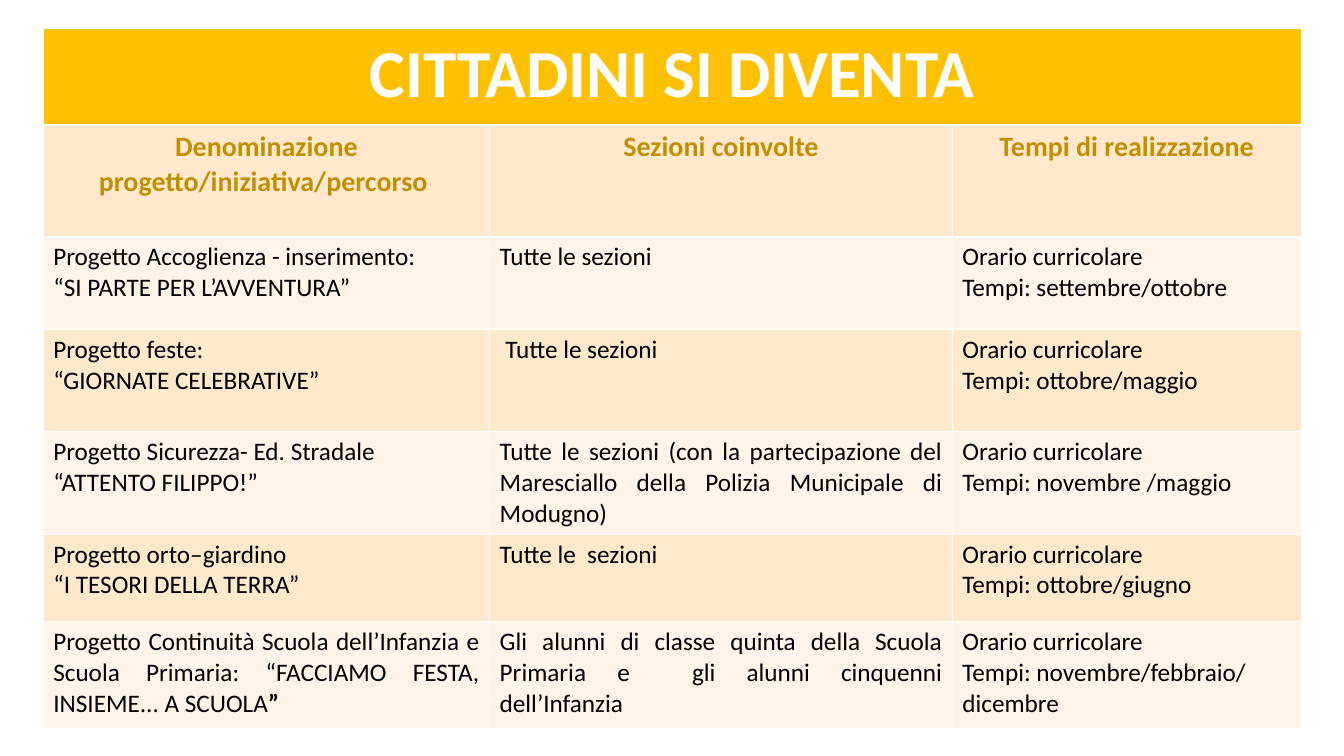
from pptx import Presentation
from pptx.dml.color import RGBColor
from pptx.enum.text import PP_ALIGN
from pptx.util import Cm, Pt

CENTER, JUSTIFY, LEFT = PP_ALIGN.CENTER, PP_ALIGN.JUSTIFY, PP_ALIGN.LEFT

COLORS = {
    "title_fill": "FFC000",
    "title_text": "FFFFFF",
    "header_text": "BF9000",
    "body_text": "000000",
    "dark_band": "FFE8CC",
    "light_band": "FFF4E7",
}
COL_WIDTHS = [11.25, 11.66, 8.79]
ROW_HEIGHTS = [2.44, 2.82, 2.34, 2.57, 2.57, 2.21, 2.69]

TITLE = "CITTADINI SI DIVENTA"
HEADERS = ["Denominazione progetto/iniziativa/percorso ", "Sezioni coinvolte",
           "Tempi di realizzazione"]
PROJECTS = [
    ["Progetto Accoglienza - inserimento: \n“SI PARTE PER L’AVVENTURA”",
     "Tutte le sezioni ",
     "Orario curricolare\nTempi: settembre/ottobre"],
    ["Progetto feste: \n“GIORNATE CELEBRATIVE”",
     " Tutte le sezioni ",
     "Orario curricolare\nTempi: ottobre/maggio"],
    ["Progetto Sicurezza- Ed. Stradale \n“ATTENTO FILIPPO!” ",
     "Tutte le sezioni (con la partecipazione del Maresciallo della Polizia "
     "Municipale di Modugno)",
     "Orario curricolare\nTempi: novembre /maggio "],
    ["Progetto orto–giardino\n“I TESORI DELLA TERRA”",
     "Tutte le  sezioni",
     "Orario curricolare\nTempi: ottobre/giugno"],
    ["Progetto Continuità Scuola dell’Infanzia e Scuola Primaria: "
     "“FACCIAMO FESTA, INSIEME... A SCUOLA”",
     "Gli alunni di classe quinta della Scuola Primaria e  gli alunni "
     "cinquenni dell’Infanzia",
     "Orario curricolare \nTempi: novembre/febbraio/ dicembre"],
]


def write(cell, text, fill, color="body_text", size=18, bold=False, align=JUSTIFY):
    """Fill a cell and set its text, one paragraph per line."""
    cell.fill.solid()
    cell.fill.fore_color.rgb = RGBColor.from_string(COLORS[fill])
    tf = cell.text_frame
    tf.text = text
    for p in tf.paragraphs:
        p.alignment = align
        font = p.runs[0].font
        font.name, font.size, font.bold = "Calibri", Pt(size), bold
        font.color.rgb = RGBColor.from_string(COLORS[color])


prs = Presentation()
prs.slide_width, prs.slide_height = Cm(33.87), Cm(19.05)
s = prs.slides.add_slide(prs.slide_layouts[6])

table = s.shapes.add_table(len(ROW_HEIGHTS), len(COL_WIDTHS), Cm(1.09), Cm(0.71),
                           Cm(sum(COL_WIDTHS)), Cm(sum(ROW_HEIGHTS))).table
for column, width in zip(table.columns, COL_WIDTHS):
    column.width = Cm(width)
for row, height in zip(table.rows, ROW_HEIGHTS):
    row.height = Cm(height)

title = table.cell(0, 0)
title.merge(table.cell(0, 2))
write(title, TITLE, "title_fill", "title_text", 48, True, CENTER)

for col, header in enumerate(HEADERS):
    write(table.cell(1, col), header, "dark_band", "header_text", 20, True, CENTER)

for row, project in enumerate(PROJECTS, start=2):
    band = "dark_band" if row % 2 else "light_band"
    for col, text in enumerate(project):
        write(table.cell(row, col), text, band)

# The last deadline wraps, so it is left-aligned to keep its word gaps normal
table.cell(6, 2).text_frame.paragraphs[1].alignment = LEFT

# The closing quotation mark of the last project is bold
p = table.cell(6, 0).text_frame.paragraphs[0]
r = p.runs[0]
r.text = r.text[:-1]
quote = p.add_run()
quote.text = "”"
quote.font.name, quote.font.size, quote.font.bold = "Calibri", Pt(18), True
quote.font.color.rgb = RGBColor.from_string(COLORS["body_text"])

prs.save("out.pptx")
